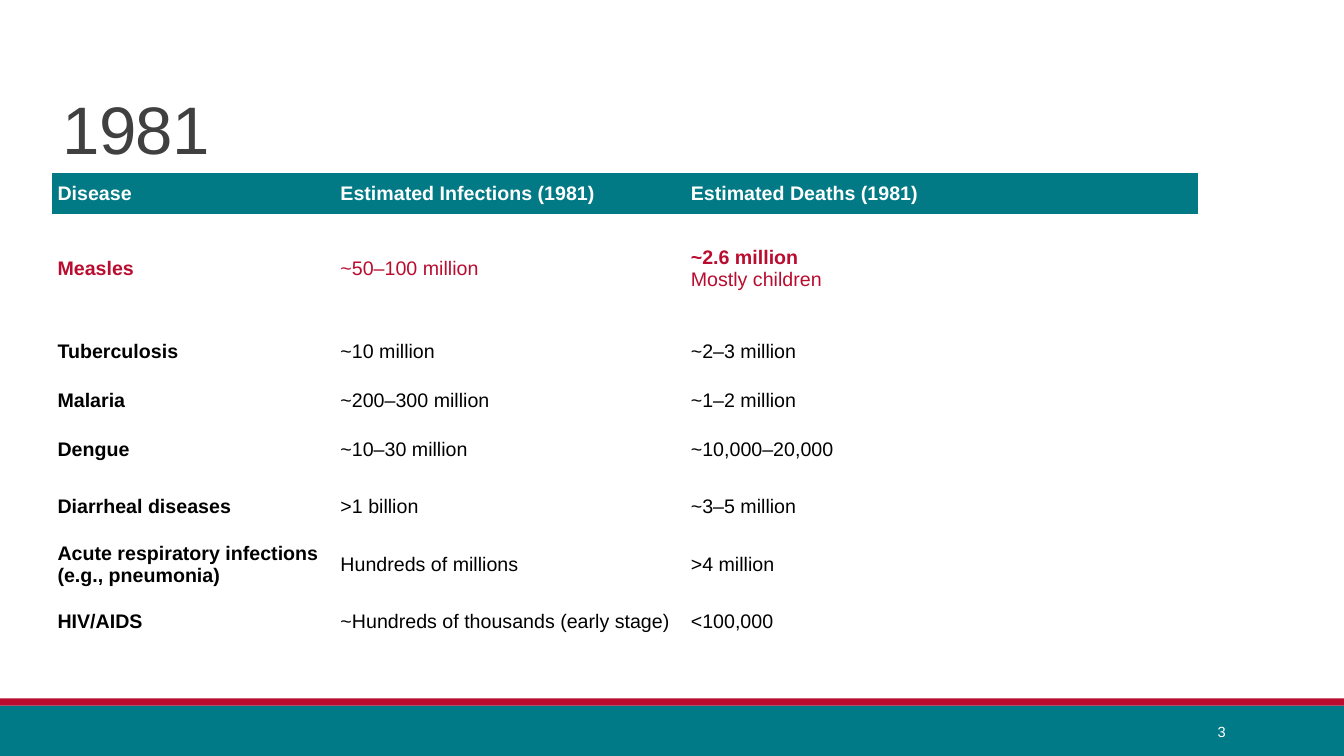
from dataclasses import dataclass

from pptx import Presentation
from pptx.dml.color import RGBColor
from pptx.enum.shapes import MSO_SHAPE
from pptx.enum.text import MSO_ANCHOR, MSO_AUTO_SIZE, PP_ALIGN
from pptx.oxml.ns import qn
from pptx.util import Cm, Pt

TEAL, HEADER_TEAL, RED = "007A86", "017A86", "BA0C2F"
GREY, BLACK, WHITE = "404040", "000000", "FFFFFF"
NO_STYLE = "{2D5ABB26-0587-4C30-8999-92F81FD0307C}"
SLIDE_W, SLIDE_H = 33.87, 19.05
LEFT, TABLE_TOP = 1.32, 4.37
COL_WIDTHS = (7.13, 8.83, 12.9)


@dataclass
class Band:
    top: float
    height: float
    color: str


@dataclass
class Row:
    disease: str
    infections: str
    deaths: str
    height: float = 1.45
    color: str = BLACK


BANDS = [Band(17.78, 1.27, TEAL), Band(17.6, 0.18, RED)]
HEADER = Row("Disease", "Estimated Infections (1981)", "Estimated Deaths (1981)",
             1.02, WHITE)
ROWS = [
    HEADER,
    Row("Measles", "~50–100 million", "~2.6 million\nMostly children", 2.74, RED),
    Row("Tuberculosis", "~10 million", "~2–3 million"),
    Row("Malaria", "~200–300 million", "~1–2 million", 1.02),
    Row("Dengue", "~10–30 million", "~10,000–20,000"),
    Row("Diarrheal diseases", ">1 billion", "~3–5 million"),
    Row("Acute respiratory infections (e.g., pneumonia)", "Hundreds of millions",
        ">4 million"),
    Row("HIV/AIDS", "~Hundreds of thousands (early stage)", "<100,000"),
]


def rgb(color: str) -> RGBColor:
    return RGBColor.from_string(color)


def set_attrs(obj, **values) -> None:
    for name, value in values.items():
        setattr(obj, name, value)


def add_run(p, text: str, size: float, color: str, bold: bool = False):
    r = p.add_run()
    r.text = text
    set_attrs(r.font, name="Arial", size=Pt(size), bold=bold)
    r.font.color.rgb = rgb(color)
    return r


def add_band(s, band: Band) -> None:
    sp = s.shapes.add_shape(MSO_SHAPE.RECTANGLE, 0, Cm(band.top),
                            Cm(SLIDE_W), Cm(band.height))
    sp.shadow.inherit = False
    sp.fill.solid()
    sp.fill.fore_color.rgb = rgb(band.color)
    sp.line.fill.background()


def fill_title(s, text: str) -> None:
    title = s.shapes.title
    set_attrs(title, left=Cm(LEFT), top=Cm(0.33), width=Cm(27.94), height=Cm(4.04))
    tf = title.text_frame
    set_attrs(tf, vertical_anchor=MSO_ANCHOR.BOTTOM, word_wrap=True,
              auto_size=MSO_AUTO_SIZE.NONE)
    p = tf.paragraphs[0]
    set_attrs(p, alignment=PP_ALIGN.LEFT, line_spacing=0.85)
    r = add_run(p, text, 48, GREY)
    r.font._element.set("spc", "-50")


def fill_cell(cell, text: str, row: Row, first_column: bool) -> None:
    set_attrs(cell, vertical_anchor=MSO_ANCHOR.MIDDLE,
              margin_left=Cm(0.13), margin_right=Cm(0.13),
              margin_top=Cm(0.08), margin_bottom=Cm(0.08))
    if row is HEADER:
        cell.fill.solid()
        cell.fill.fore_color.rgb = rgb(HEADER_TEAL)
    else:
        cell.fill.background()
    tf = cell.text_frame
    lines = text.split("\n")
    for i, line in enumerate(lines):
        p = tf.add_paragraph() if i else tf.paragraphs[0]
        leads = len(lines) > 1 and i == 0
        add_run(p, line, 14, row.color, row is HEADER or first_column or leads)


def add_disease_table(s) -> None:
    frame = s.shapes.add_table(len(ROWS), len(COL_WIDTHS), Cm(LEFT), Cm(TABLE_TOP),
                               Cm(sum(COL_WIDTHS)), Cm(sum(r.height for r in ROWS)))
    table = frame.table
    table.horz_banding = False
    table._tbl.tblPr.find(qn("a:tableStyleId")).text = NO_STYLE
    for column, width in zip(table.columns, COL_WIDTHS):
        column.width = Cm(width)
    for i, row in enumerate(ROWS):
        table.rows[i].height = Cm(row.height)
        for j, text in enumerate((row.disease, row.infections, row.deaths)):
            fill_cell(table.cell(i, j), text, row, j == 0)


def add_page_number(s, number: str) -> None:
    tf = s.shapes.add_textbox(Cm(27.51), Cm(17.93), Cm(3.63), Cm(1.02)).text_frame
    set_attrs(tf, word_wrap=True, vertical_anchor=MSO_ANCHOR.MIDDLE)
    p = tf.paragraphs[0]
    p.alignment = PP_ALIGN.RIGHT
    add_run(p, number, 10.5, WHITE)


def main() -> None:
    prs = Presentation()
    set_attrs(prs, slide_width=Cm(SLIDE_W), slide_height=Cm(SLIDE_H))
    s = prs.slides.add_slide(prs.slide_layouts[5])
    for band in BANDS:
        add_band(s, band)
    fill_title(s, "1981")
    add_disease_table(s)
    add_page_number(s, "3")
    prs.save("out.pptx")


if __name__ == "__main__":
    main()
